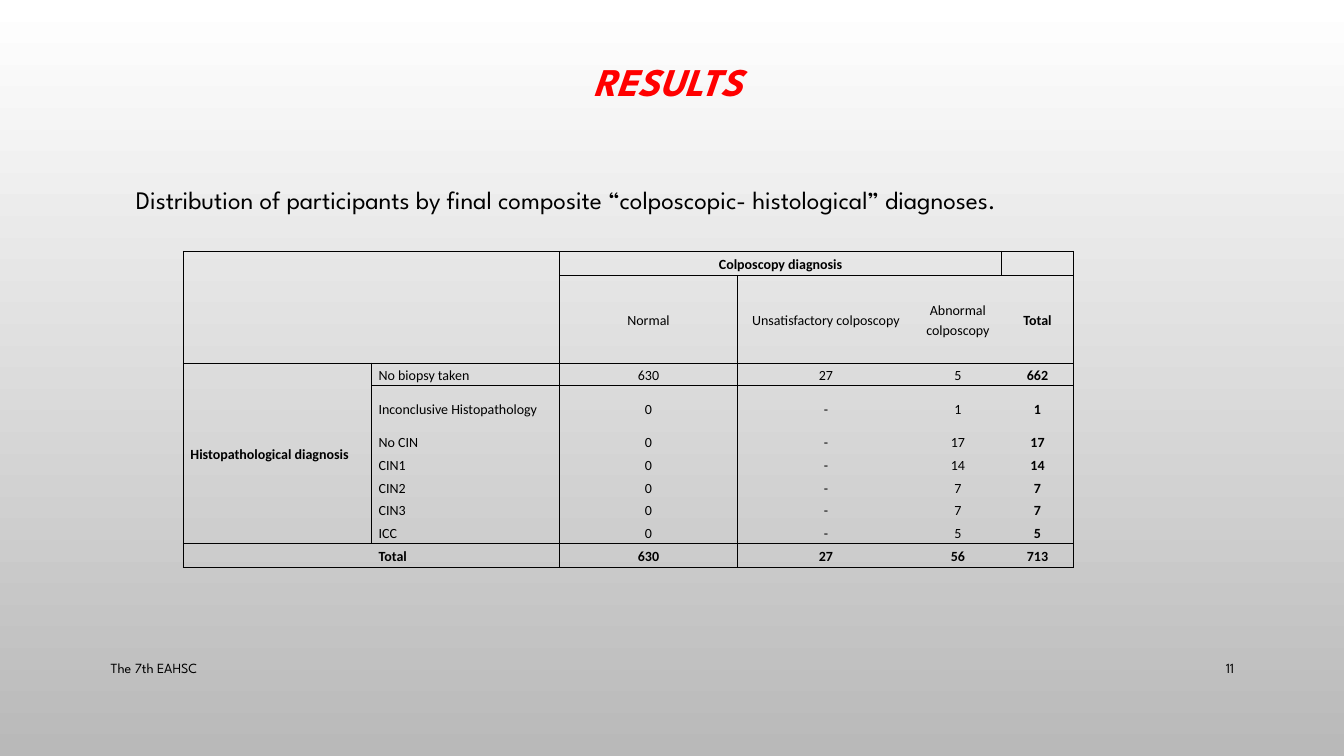
import pptx
import pptx.util
import pptx.dml.color
import pptx.enum.text
import lxml.etree

ALIGN = pptx.enum.text.PP_ALIGN
MIDDLE = pptx.enum.text.MSO_ANCHOR.MIDDLE
TOP = pptx.enum.text.MSO_ANCHOR.TOP
NS = "{http://schemas.openxmlformats.org/drawingml/2006/main}"
PLAIN = "{2D5ABB26-0587-4C30-8999-92F81FD0307C}"


def paint(code):
    return pptx.dml.color.RGBColor.from_string(code)


def write(frame, text, size=10, face="League Spartan", color="000000",
          bold=False, italic=False, align=ALIGN.LEFT, space=None):
    para = frame.paragraphs[0]
    para.alignment = align
    if space:
        para.line_spacing = space
    if not text:
        lxml.etree.SubElement(para._p, NS + "endParaRPr", sz=str(size * 100))
        return
    run = para.add_run()
    run.text = text
    font = run.font
    font.size = pptx.util.Pt(size)
    font.name = face
    font.bold = bold
    font.italic = italic
    font.color.rgb = paint(color)


class Deck:
    face = "Calibri"
    ink = "000000"

    def __init__(self):
        self.show = pptx.Presentation()
        self.show.slide_width = pptx.util.Inches(13.33)
        self.show.slide_height = pptx.util.Inches(7.5)
        self.slide = self.show.slides.add_slide(self.show.slide_layouts[5])

    def wide(self, share):
        return round(self.show.slide_width * share / 100)

    def high(self, share):
        return round(self.show.slide_height * share / 100)

    def area(self, left, top, width, height):
        return self.wide(left), self.high(top), self.wide(width), self.high(height)

    def shade(self, start, end):
        fill = self.slide.background.fill
        fill.gradient()
        fill.gradient_angle = 270
        for stop, place, code in zip(fill.gradient_stops, (0, 1), (start, end)):
            stop.position = place
            stop.color.rgb = paint(code)

    def title(self, text, box, **look):
        shape = self.slide.shapes.title
        shape.left, shape.top, shape.width, shape.height = self.area(*box)
        shape.text_frame.vertical_anchor = MIDDLE
        write(shape.text_frame, text, **look)

    def label(self, text, box, anchor=MIDDLE, **look):
        frame = self.slide.shapes.add_textbox(*self.area(*box)).text_frame
        frame.word_wrap = True
        frame.vertical_anchor = anchor
        write(frame, text, **look)

    def edge(self, cell, side):
        line = lxml.etree.SubElement(cell._tc.get_or_add_tcPr(), NS + "ln" + side, w="12700")
        fill = lxml.etree.SubElement(line, NS + "solidFill")
        lxml.etree.SubElement(fill, NS + "srgbClr", val=self.ink)

    def table(self, rows, spot, cols, heights, blocks, spans, bold):
        box = self.area(*spot, sum(cols), sum(heights))
        grid = self.slide.shapes.add_table(len(rows), len(cols), *box).table
        grid._tbl.tblPr.find(NS + "tableStyleId").text = PLAIN
        grid.first_row = grid.horz_banding = False
        for col, share in zip(grid.columns, cols):
            col.width = self.wide(share)
        for row, share in zip(grid.rows, heights):
            row.height = self.high(share)
        for r, row in enumerate(rows):
            for c, text in enumerate(row):
                cell = grid.cell(r, c)
                cell.vertical_anchor = MIDDLE
                cell.margin_left = cell.margin_right = pptx.util.Inches(0.07)
                cell.margin_top = cell.margin_bottom = 0
                align = ALIGN.CENTER if c > 1 else ALIGN.JUSTIFY
                write(cell.text_frame, text, face=self.face, color=self.ink,
                      bold=bold(r, c), align=align, space=1.15)
        for top, left, end, right in blocks:
            for r in range(top, end + 1):
                for c in range(left, right + 1):
                    cell = grid.cell(r, c)
                    sides = (("L", c == left), ("R", c == right),
                             ("T", r == top), ("B", r == end))
                    for side, drawn in sides:
                        if drawn:
                            self.edge(cell, side)
                    cell.fill.background()
        for top, left, end, right in spans:
            grid.cell(top, left).merge(grid.cell(end, right))


ROWS = [
    ["", "", "Colposcopy diagnosis", "", "", ""],
    ["", "", "Normal", "Unsatisfactory colposcopy", "Abnormal colposcopy", "Total"],
    ["Histopathological diagnosis", "No biopsy taken", "630", "27", "5", "662"],
    ["", "Inconclusive Histopathology", "0", "-", "1", "1"],
    ["", "No CIN", "0", "-", "17", "17"],
    ["", "CIN1", "0", "-", "14", "14"],
    ["", "CIN2", "0", "-", "7", "7"],
    ["", "CIN3", "0", "-", "7", "7"],
    ["", "ICC", "0", "-", "5", "5"],
    ["", "Total", "630", "27", "56", "713"],
]
BLOCKS = [(0, 0, 1, 1), (0, 2, 0, 5), (1, 2, 1, 5), (2, 0, 8, 0),
          (2, 1, 8, 1), (2, 2, 8, 5), (9, 0, 9, 1), (9, 2, 9, 5)]
SPANS = [(0, 2, 0, 4), (2, 0, 8, 0)]


def main():
    deck = Deck()
    deck.shade("FFFFFF", "B9B9B9")
    deck.title("RESULTS", (7.2, -0.53, 85, 23.33), size=28, color="FF0000",
               bold=True, italic=True, align=ALIGN.CENTER, space=0.9)
    deck.table(ROWS, (13.65, 33.25), [14, 14, 13.2, 13.2, 6.45, 5.4],
               [3.2, 11.6, 3, 5.9] + [3] * 5 + [3.2], BLOCKS, SPANS,
               lambda r, c: r in (0, 9) or c in (0, 5))
    deck.label("The 7th EAHSC", (7.5, 85.73, 54.76, 5.33))
    deck.label("11", (86.27, 85.73, 6.3, 5.33), align=ALIGN.RIGHT)
    deck.label("Distribution of participants by final composite “colposcopic- histological” diagnoses.",
               (9.38, 23.73, 78.4, 5.33), anchor=TOP, size=18)
    deck.show.save("out.pptx")


if __name__ == "__main__":
    main()
